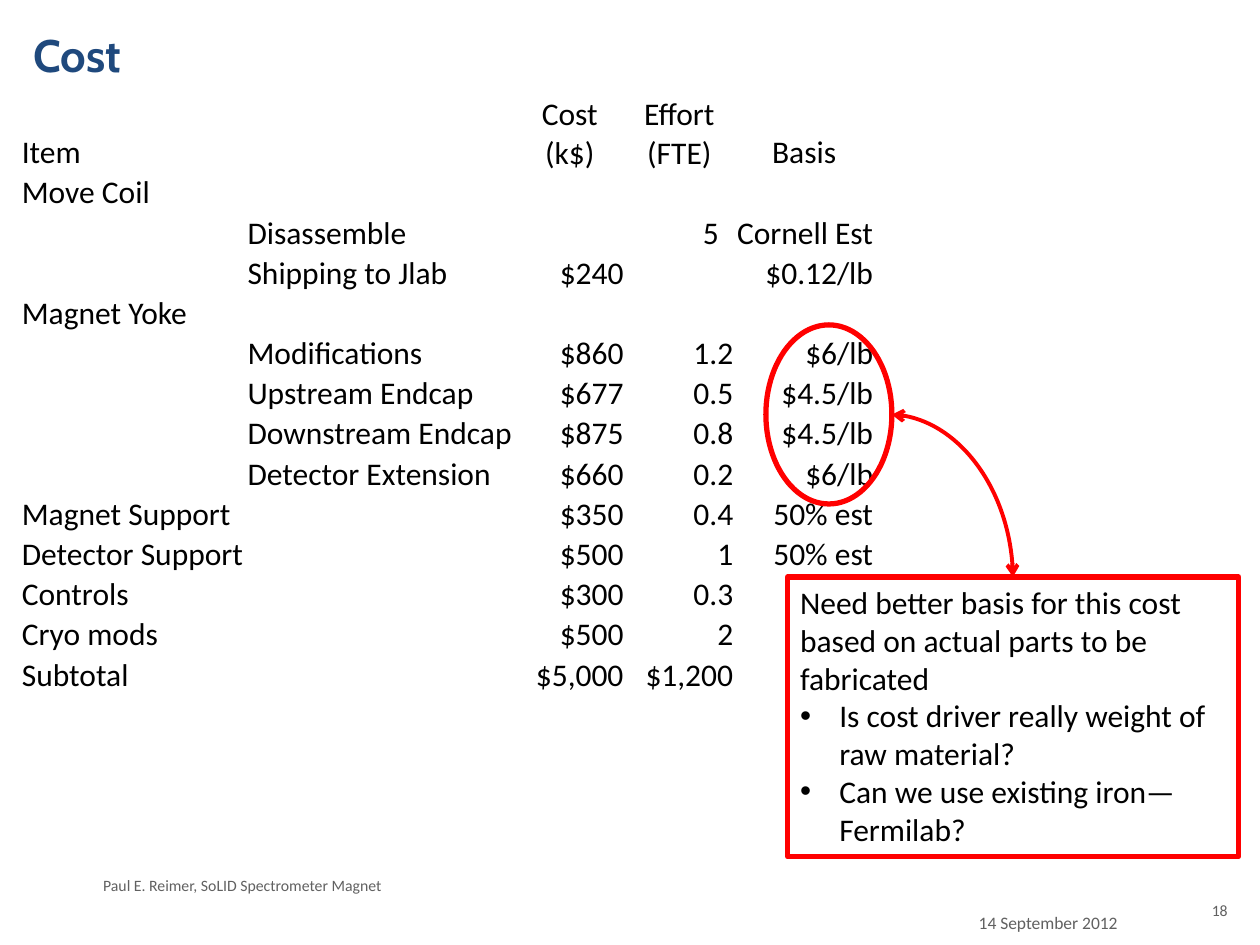
import dataclasses

import pptx
import pptx.dml.color
import pptx.enum.shapes
import pptx.enum.text
import pptx.oxml
import pptx.oxml.ns
import pptx.util

Cm = pptx.util.Cm
Pt = pptx.util.Pt
Align = pptx.enum.text.PP_ALIGN
Anchor = pptx.enum.text.MSO_ANCHOR
ShapeType = pptx.enum.shapes.MSO_SHAPE


@dataclasses.dataclass(frozen=True)
class Theme:
    title_font: str = "Cabin"
    body_font: str = "Calibri"
    title_color: str = "1F497D"
    text_color: str = "000000"
    footer_color: str = "616161"
    accent_color: str = "FF0000"
    title_size: float = 26
    body_size: float = 18
    date_size: float = 10
    footer_size: float = 9
    outline_width: float = 3
    arrow_width: float = 2.25


class SlideBuilder:
    def __init__(self, slide, theme):
        self.slide = slide
        self.theme = theme

    def color(self, value):
        return pptx.dml.color.RGBColor.from_string(value)

    def add_words(self, paragraph, text, size=None, color=None, font=None, bold=False, align=Align.LEFT):
        paragraph.alignment = align
        run = paragraph.add_run()
        run.text = text
        run.font.name = font or self.theme.body_font
        run.font.size = Pt(size or self.theme.body_size)
        run.font.bold = bold
        run.font.color.rgb = self.color(color or self.theme.text_color)

    def text(self, left, top, width, height, text, **style):
        box = self.slide.shapes.add_textbox(Cm(left), Cm(top), Cm(width), Cm(height))
        box.text_frame.word_wrap = True
        self.add_words(box.text_frame.paragraphs[0], text, **style)

    def fill_cell(self, cell, text, align):
        cell.fill.background()
        cell.vertical_anchor = Anchor.BOTTOM
        cell.margin_left = cell.margin_right = cell.margin_top = Cm(0.02)
        cell.margin_bottom = Cm(0)
        if not text:
            return
        frame = cell.text_frame
        for index, line in enumerate(text.split("\n")):
            paragraph = frame.add_paragraph() if index else frame.paragraphs[0]
            self.add_words(paragraph, line, align=align)

    def table(self, left, top, widths, header_height, row_height, rows):
        height = header_height + row_height * (len(rows) - 1)
        frame = self.slide.shapes.add_table(
            len(rows), len(widths), Cm(left), Cm(top), Cm(sum(widths)), Cm(height))
        table = frame.table
        table.first_row = False
        table.horz_banding = False
        for column, width in zip(table.columns, widths):
            column.width = Cm(width)
        for row_index, values in enumerate(rows):
            table.rows[row_index].height = Cm(row_height if row_index else header_height)
            for column_index, value in enumerate(values):
                number_align = Align.RIGHT if row_index else Align.CENTER
                align = Align.LEFT if column_index < 2 else number_align
                self.fill_cell(table.cell(row_index, column_index), value, align)
        return table

    def outline(self, kind, left, top, width, height):
        shape = self.slide.shapes.add_shape(kind, Cm(left), Cm(top), Cm(width), Cm(height))
        shape.shadow.inherit = False
        shape.fill.background()
        shape.line.color.rgb = self.color(self.theme.accent_color)
        shape.line.width = Pt(self.theme.outline_width)
        return shape

    def bullet(self, paragraph, indent):
        properties = paragraph._p.get_or_add_pPr()
        properties.set("marL", str(Cm(indent)))
        properties.set("indent", str(-Cm(indent)))
        font = pptx.oxml.ns.qn("a:buFont")
        properties.append(properties.makeelement(font, {"typeface": "Arial"}))
        character = pptx.oxml.ns.qn("a:buChar")
        properties.append(properties.makeelement(character, {"char": "•"}))

    def callout(self, left, top, width, height, lead, bullets):
        shape = self.outline(ShapeType.RECTANGLE, left, top, width, height)
        frame = shape.text_frame
        frame.word_wrap = True
        frame.vertical_anchor = Anchor.TOP
        self.add_words(frame.paragraphs[0], lead)
        for text in bullets:
            paragraph = frame.add_paragraph()
            self.bullet(paragraph, 0.79)
            self.add_words(paragraph, text)

    def curved_arrow(self, start, end):
        connector = self.slide.shapes.add_connector(
            pptx.enum.shapes.MSO_CONNECTOR.CURVE, *map(Cm, start + end))
        connector.line.color.rgb = self.color(self.theme.accent_color)
        connector.line.width = Pt(self.theme.arrow_width)
        properties = connector._element.spPr
        properties.find(pptx.oxml.ns.qn("a:prstGeom")).set("prst", "curvedConnector2")
        line = properties.find(pptx.oxml.ns.qn("a:ln"))
        for end_name in ("a:headEnd", "a:tailEnd"):
            line.append(line.makeelement(pptx.oxml.ns.qn(end_name), {"type": "arrow"}))
        properties.append(properties.makeelement(pptx.oxml.ns.qn("a:effectLst"), {}))


COST_ROWS = [
    ("Item", "", "Cost\n(k$)", "Effort (FTE)", "Basis"),
    ("Move Coil", "", "", "", ""),
    ("", "Disassemble", "", "5", "Cornell Est"),
    ("", "Shipping to Jlab", "$240", "", "$0.12/lb"),
    ("Magnet Yoke", "", "", "", ""),
    ("", "Modifications", "$860", "1.2", "$6/lb"),
    ("", "Upstream Endcap", "$677", "0.5", "$4.5/lb"),
    ("", "Downstream Endcap", "$875", "0.8", "$4.5/lb"),
    ("", "Detector Extension", "$660", "0.2", "$6/lb"),
    ("Magnet Support", "", "$350", "0.4", "50% est"),
    ("Detector Support", "", "$500", "1", "50% est"),
    ("Controls", "", "$300", "0.3", ""),
    ("Cryo mods", "", "$500", "2", ""),
    ("Subtotal", "", "$5,000", "$1,200", ""),
]


def main():
    presentation = pptx.Presentation()
    presentation.slide_width = Cm(25.4)
    presentation.slide_height = Cm(19.05)
    theme = Theme()
    builder = SlideBuilder(presentation.slides.add_slide(presentation.slide_layouts[6]), theme)

    builder.text(0.42, 0.42, 22.86, 1.78, "Cost", size=theme.title_size,
                 color=theme.title_color, font=theme.title_font, bold=True)
    builder.text(19.48, 18.26, 3.81, 0.58, "14 September 2012",
                 size=theme.date_size, color=theme.footer_color)
    builder.text(1.83, 17.53, 16.51, 0.64, "Paul E. Reimer, SoLID Spectrometer Magnet",
                 size=theme.footer_size, color=theme.footer_color)

    table = builder.table(0.42, 1.91, (4.55, 5.41, 2.21, 2.21, 2.82), 1.56, 0.81, COST_ROWS)
    disassemble_effort = table.cell(2, 3)
    disassemble_effort.margin_right = Cm(0.31)

    builder.text(23.93, 18.03, 1.07, 1.02, "18", size=theme.footer_size,
                 color=theme.footer_color, align=Align.RIGHT)
    builder.outline(ShapeType.OVAL, 15.44, 6.55, 2.54, 3.61)
    builder.callout(
        15.88, 11.63, 9.09, 5.64,
        "Need better basis for this cost based on actual parts to be fabricated",
        ("Is cost driver really weight of raw material?",
         "Can we use existing iron—Fermilab?"))
    builder.curved_arrow((17.98, 8.36), (20.42, 11.63))

    presentation.save("out.pptx")


if __name__ == "__main__":
    main()
